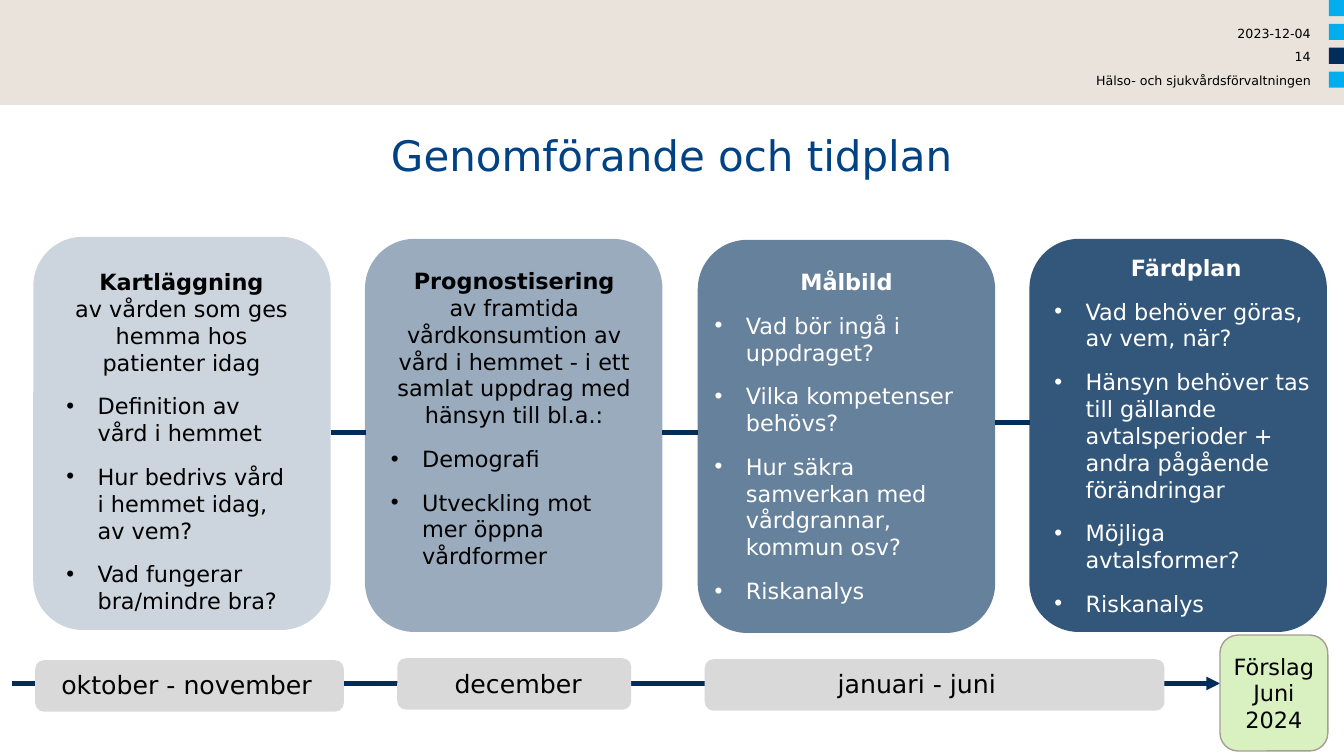
from lxml import etree
from pptx import Presentation
from pptx.dml.color import RGBColor
from pptx.enum.shapes import MSO_CONNECTOR, MSO_SHAPE
from pptx.enum.text import MSO_ANCHOR, MSO_AUTO_SIZE, PP_ALIGN
from pptx.oxml.ns import qn
from pptx.util import Inches, Pt

NAVY, SKY, GREY, BLACK, WHITE = "002D5A", "00AEEF", "D9D9D9", "000000", "FFFFFF"
LEFT, CENTER, RIGHT = PP_ALIGN.LEFT, PP_ALIGN.CENTER, PP_ALIGN.RIGHT


def colour(hex_text):
    return RGBColor.from_string(hex_text)


def add_bullet(para, indent=0.31):
    props = para._p.get_or_add_pPr()
    props.set("marL", str(Inches(indent)))
    props.set("indent", str(-Inches(indent)))
    etree.SubElement(props, qn("a:buFont"), typeface="Arial")
    etree.SubElement(props, qn("a:buChar"), char="•")


def write(frame, text, first=False, size=16, color=BLACK, bold=False,
          align=LEFT, bullet=False, before=0):
    para = frame.paragraphs[0] if first else frame.add_paragraph()
    if bullet:
        add_bullet(para)
    para.alignment = align
    if before:
        para.space_before = Pt(before)
    span = para.add_run()
    span.text = text
    span.font.name = "DejaVu Sans"
    span.font.size = Pt(size)
    span.font.bold = bold
    span.font.color.rgb = colour(color)


class SlideBuilder:
    def __init__(self, deck):
        self.page = deck.slides.add_slide(deck.slide_layouts[5])

    def prepare(self, frame, insets, anchor=MSO_ANCHOR.TOP):
        frame.word_wrap = True
        frame.auto_size = MSO_AUTO_SIZE.NONE
        frame.vertical_anchor = anchor
        (frame.margin_left, frame.margin_top,
         frame.margin_right, frame.margin_bottom) = map(Inches, insets)
        return frame

    def title(self, text, *place):
        box = self.page.shapes.title
        box.left, box.top, box.width, box.height = map(Inches, place)
        frame = self.prepare(box.text_frame, (0, 0, 0, 0))
        write(frame, text, first=True, size=30, color="004284", align=CENTER)

    def shape(self, kind, *place, fill, line=None, alpha=None):
        box = self.page.shapes.add_shape(kind, *map(Inches, place))
        box.shadow.inherit = False
        box.fill.solid()
        box.fill.fore_color.rgb = colour(fill)
        if alpha:
            tone = box._element.spPr.find(qn("a:solidFill"))[0]
            etree.SubElement(tone, qn("a:alpha"), val=str(alpha * 1000))
        if line:
            box.line.color.rgb = colour(line)
            box.line.width = Pt(1)
        else:
            box.line.fill.background()
        return box

    def text(self, *place, insets=(0.1, 0.05, 0.1, 0.05)):
        box = self.page.shapes.add_textbox(*map(Inches, place))
        return self.prepare(box.text_frame, insets)

    def line(self, start, end, y, arrow=False):
        rule = self.page.shapes.add_connector(
            MSO_CONNECTOR.STRAIGHT, Inches(start), Inches(y), Inches(end), Inches(y))
        rule.line.color.rgb = colour(NAVY)
        rule.line.width = Pt(3.25)
        if arrow:
            etree.SubElement(rule.line._get_or_add_ln(), qn("a:tailEnd"), type="triangle")
        etree.SubElement(rule._element.spPr, qn("a:effectLst"))

    def card(self, place, alpha, text_place, heading, intro, points, color):
        self.shape(MSO_SHAPE.ROUNDED_RECTANGLE, *place, fill=NAVY, alpha=alpha)
        frame = self.text(*text_place, insets=(0.1, 0.04, 0.1, 0.05))
        write(frame, heading, first=True, color=color, bold=True, align=CENTER)
        if intro:
            write(frame, intro, color=color, align=CENTER)
        for point in points:
            write(frame, point, color=color, bullet=True, before=12)


# Left, top, alpha, text place, heading, intro, points, text colour
CARDS = [
    (0.33, 2.35, 20, (0.56, 2.62, 2.48, 3.27), "Kartläggning",
     "av vården som ges hemma hos patienter idag",
     ["Definition av vård i hemmet", "Hur bedrivs vård i hemmet idag, av vem?",
      "Vad fungerar bra/mindre bra?"], BLACK),
    (3.62, 2.37, 40, (3.78, 2.61, 2.64, 3.27), "Prognostisering",
     "av framtida vårdkonsumtion av vård i hemmet - i ett samlat uppdrag "
     "med hänsyn till bl.a.:",
     ["Demografi", "Utveckling mot mer öppna vårdformer"], BLACK),
    (6.92, 2.38, 60, (6.99, 2.62, 2.81, 3.23), "Målbild", None,
     ["Vad bör ingå i uppdraget?", "Vilka kompetenser behövs?",
      "Hur säkra samverkan med vårdgrannar, kommun osv?", "Riskanalys"], WHITE),
    (10.21, 2.37, 80, (10.36, 2.48, 2.81, 3.23), "Färdplan", None,
     ["Vad behöver göras, av vem, när?",
      "Hänsyn behöver tas till gällande avtalsperioder + andra pågående förändringar",
      "Möjliga avtalsformer?", "Riskanalys"], WHITE),
]

# Bar place, label place, label
PERIODS = [
    ((0.35, 6.55, 3.06, 0.51), (0.51, 6.59, 2.75, 0.52), "oktober - november"),
    ((3.94, 6.53, 2.32, 0.51), (4.41, 6.58, 1.63, 0.35), "december"),
    ((6.99, 6.54, 4.56, 0.51), (8.21, 6.58, 2.4, 0.51), "januari - juni"),
]


def main():
    deck = Presentation()
    deck.slide_width, deck.slide_height = Inches(13.33), Inches(7.5)
    slide = SlideBuilder(deck)

    # Header band, colour squares and details
    slide.shape(MSO_SHAPE.RECTANGLE, 0, 0, 13.33, 1.04, fill="E9E3DC")
    for row, fill in enumerate([SKY, SKY, NAVY, SKY]):
        slide.shape(MSO_SHAPE.RECTANGLE, 13.18, row * 0.237, 0.16, 0.16, fill=fill)
    details = ["2023-12-04", "14", "Hälso- och sjukvårdsförvaltningen"]
    for row, detail in enumerate(details):
        frame = slide.text(9.33, 0.26 + row * 0.23, 3.67, 0.14, insets=(0, 0, 0, 0))
        write(frame, detail, first=True, size=9, align=RIGHT)
    slide.title("Genomförande och tidplan", 1.05, 1.28, 11.23, 0.91)

    # Step cards and the links between them
    for left, top, alpha, *content in CARDS:
        slide.card((left, top, 2.95, 3.9), alpha, *content)
    for start, y in [(3.28, 4.29), (6.57, 4.29), (9.87, 4.19)]:
        slide.line(start, start + 0.35, y)

    # Timeline with periods
    slide.line(0.12, 12.1, 6.78, arrow=True)
    for bar_place, label_place, label in PERIODS:
        slide.shape(MSO_SHAPE.ROUNDED_RECTANGLE, *bar_place, fill=GREY)
        write(slide.text(*label_place), label, first=True, size=18)

    # Final proposal
    goal = slide.shape(MSO_SHAPE.ROUNDED_RECTANGLE, 12.1, 6.3, 1.07, 1.15,
                       fill="D9F0C1", line="A79D96")
    frame = slide.prepare(goal.text_frame, (0.04, 0.12, 0.04, 0.12), MSO_ANCHOR.MIDDLE)
    write(frame, "Förslag", first=True, align=CENTER)
    write(frame, "Juni 2024", align=CENTER)

    deck.save("out.pptx")


if __name__ == "__main__":
    main()
